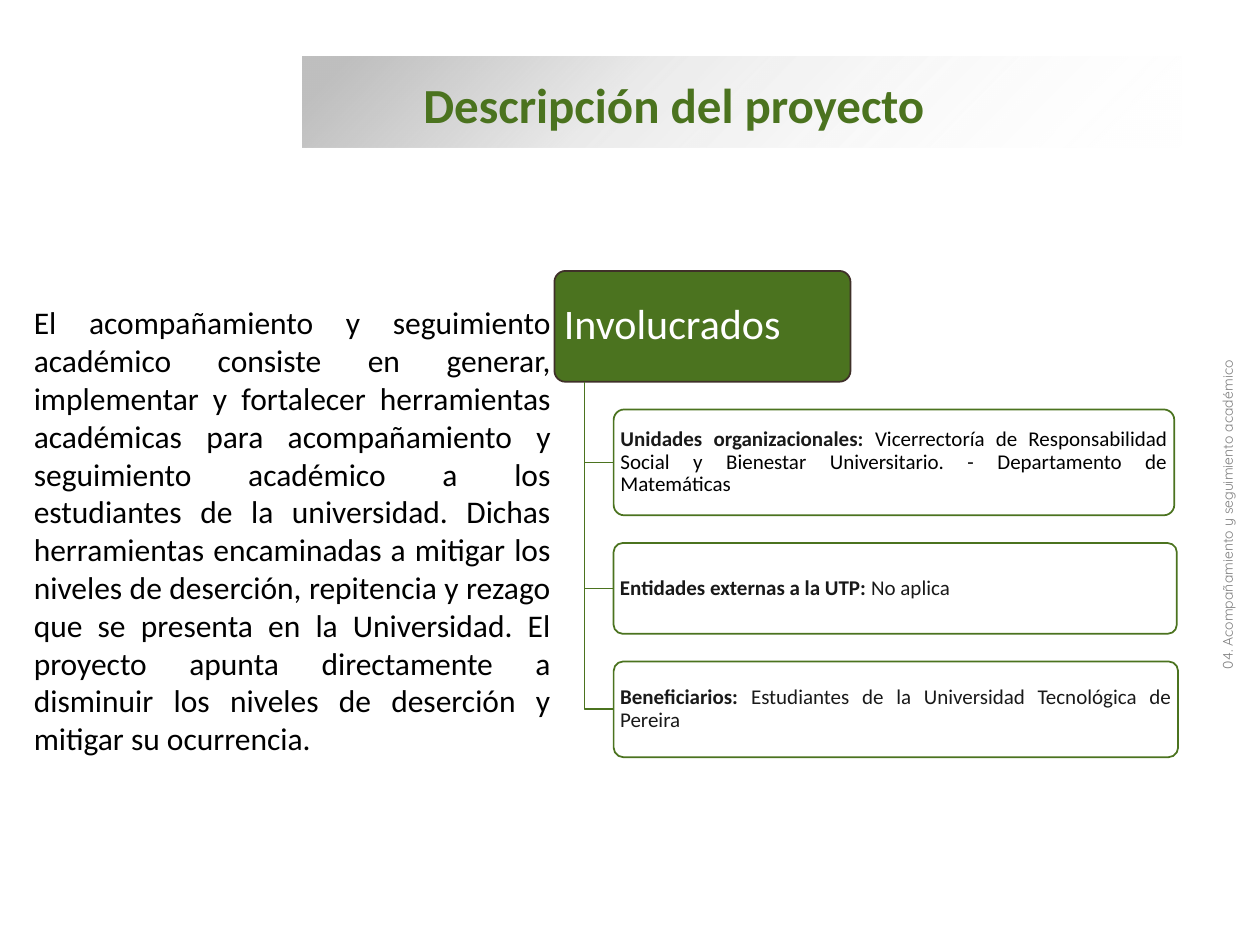
"""Build the project description slide with its tree of people involved."""
from lxml import etree
from pptx import Presentation
from pptx.dml.color import RGBColor
from pptx.enum.shapes import MSO_SHAPE
from pptx.enum.text import MSO_ANCHOR, PP_ALIGN
from pptx.oxml import parse_xml
from pptx.oxml.ns import nsdecls, qn
from pptx.util import Inches, Pt

ROUNDED, RECTANGLE = MSO_SHAPE.ROUNDED_RECTANGLE, MSO_SHAPE.RECTANGLE
LEFT, CENTER, JUSTIFY = PP_ALIGN.LEFT, PP_ALIGN.CENTER, PP_ALIGN.JUSTIFY
TOP, MIDDLE = MSO_ANCHOR.TOP, MSO_ANCHOR.MIDDLE

GREEN = RGBColor(0x4B, 0x73, 0x1F)
BROWN = RGBColor(0x3F, 0x30, 0x29)
WHITE = RGBColor(0xFF, 0xFF, 0xFF)
BLACK = RGBColor(0x00, 0x00, 0x00)
INK = RGBColor(0x19, 0x19, 0x19)
GRAY = RGBColor(0x80, 0x80, 0x80)
SILVER = RGBColor(0xBF, 0xBF, 0xBF)

TITLE = "Descripción del proyecto"
DESCRIPTION = (
    "El acompañamiento y seguimiento académico consiste en generar, implementar y "
    "fortalecer herramientas académicas para acompañamiento y seguimiento académico a "
    "los estudiantes de la universidad. Dichas herramientas encaminadas a mitigar los "
    "niveles de deserción, repitencia y rezago que se presenta en la Universidad. El "
    "proyecto apunta directamente a disminuir los niveles de deserción y mitigar su "
    "ocurrencia."
)
ROOT = "Involucrados"
BRANCHES = [
    ("Unidades organizacionales: ",
     "Vicerrectoría de Responsabilidad Social y Bienestar Universitario. - "
     "Departamento de Matemáticas", BLACK, JUSTIFY, 4.45, 0.84),
    ("Entidades externas a la UTP: ", "No aplica", INK, LEFT, 4.47, 0.72),
    ("Beneficiarios: ", "Estudiantes de la Universidad Tecnológica de Pereira",
     INK, JUSTIFY, 4.48, 0.76),
]
SIDE_LABEL = "04. Acompañamiento y seguimiento académico"

BANNER_STOPS = [(5, SILVER, 100), (37, SILVER, 31), (100, WHITE, 0)]
ROOT_LEFT, ROOT_TOP, ROOT_WIDTH, ROOT_HEIGHT = 4.4, 2.15, 2.35, 0.88
TRUNK_X, BRANCH_X, BRANCH_GAP = 4.64, 4.87, 0.22


def write(shape, spans, size, align=LEFT, anchor=TOP, font="Calibri", spacing=None):
    """Fill the shape with one paragraph of (text, colour, bold) spans."""
    frame = shape.text_frame
    frame.word_wrap = True
    frame.vertical_anchor = anchor
    para = frame.paragraphs[0]
    para.alignment = align
    if spacing:
        para.line_spacing = spacing
    for text, color, bold in spans:
        span = para.add_run()
        span.text = text
        span.font.name = font
        span.font.size = Pt(size)
        span.font.bold = bold
        span.font.color.rgb = color


def set_margins(shape, side, end):
    frame = shape.text_frame
    frame.margin_left = frame.margin_right = Inches(side)
    frame.margin_top = frame.margin_bottom = Inches(end)


def add_text(slide, place, *args, **options):
    box = slide.shapes.add_textbox(*map(Inches, place))
    write(box, *args, **options)
    return box


def add_node(slide, place, fill, line):
    node = slide.shapes.add_shape(ROUNDED, *map(Inches, place))
    node.adjustments[0] = 0.1
    node.shadow.inherit = False
    node.fill.solid()
    node.fill.fore_color.rgb = fill
    node.line.color.rgb = line
    node.line.width = Pt(1)
    return node


def set_opacity(shape, percent):
    color = shape.element.spPr.find(qn("a:solidFill")).find(qn("a:srgbClr"))
    etree.SubElement(color, qn("a:alpha"), val=str(percent * 1000))


def add_elbow(slide, middle):
    start = ROOT_TOP + ROOT_HEIGHT
    builder = slide.shapes.build_freeform(Inches(TRUNK_X), Inches(start))
    corners = [(TRUNK_X, middle), (BRANCH_X, middle)]
    builder.add_line_segments([(Inches(x), Inches(y)) for x, y in corners], close=False)
    elbow = builder.convert_to_shape()
    elbow.shadow.inherit = False
    elbow.fill.background()
    elbow.line.color.rgb = GREEN
    elbow.line.width = Pt(1)


def add_tree(slide):
    root = add_node(slide, (ROOT_LEFT, ROOT_TOP, ROOT_WIDTH, ROOT_HEIGHT), GREEN, BROWN)
    set_margins(root, 0.05, 0.03)
    write(root, [(ROOT, WHITE, False)], 24, anchor=MIDDLE, spacing=0.9)
    top = ROOT_TOP + ROOT_HEIGHT + BRANCH_GAP
    for label, text, color, align, width, height in BRANCHES:
        add_elbow(slide, top + height / 2)
        branch = add_node(slide, (BRANCH_X, top, width, height), WHITE, GREEN)
        set_opacity(branch, 90)
        set_margins(branch, 0.03, 0.02)
        write(branch, [(label, INK, True), (text, color, False)], 12, align, MIDDLE,
              spacing=0.9)
        top += height + BRANCH_GAP


def add_banner(slide):
    banner = slide.shapes.add_shape(RECTANGLE, *map(Inches, (2.4, 0.45, 6.98, 0.72)))
    banner.shadow.inherit = False
    banner.line.fill.background()
    stops = "".join(
        f'<a:gs pos="{place * 1000}"><a:srgbClr val="{color}">'
        f'<a:alpha val="{alpha * 1000}"/></a:srgbClr></a:gs>'
        for place, color, alpha in BANNER_STOPS
    )
    gradient = parse_xml(
        f'<a:gradFill {nsdecls("a")} rotWithShape="1"><a:gsLst>{stops}</a:gsLst>'
        '<a:lin ang="2700000" scaled="0"/></a:gradFill>'
    )
    banner.element.spPr.find(qn("a:prstGeom")).addnext(gradient)
    return banner


def add_title(slide, banner):
    title = slide.shapes.title
    title.left, title.top, title.width, title.height = map(Inches, (3.26, 0.54, 6.2, 0.57))
    write(title, [(TITLE, GREEN, True)], 28, anchor=MIDDLE)
    banner.element.addnext(title.element)


def main():
    deck = Presentation()
    deck.slide_width, deck.slide_height = Inches(10), Inches(7.5)
    slide = deck.slides.add_slide(deck.slide_layouts[5])
    add_text(slide, (0.17, 2.36, 4.3, 3.74), [(DESCRIPTION, BLACK, False)], 18, JUSTIFY)
    add_tree(slide)
    add_title(slide, add_banner(slide))
    side = add_text(slide, (7.39, 3.9, 4.84, 0.37), [(SIDE_LABEL, GRAY, False)], 8,
                    CENTER, font="Quicksand")
    side.rotation = 270
    deck.save("out.pptx")


if __name__ == "__main__":
    main()
